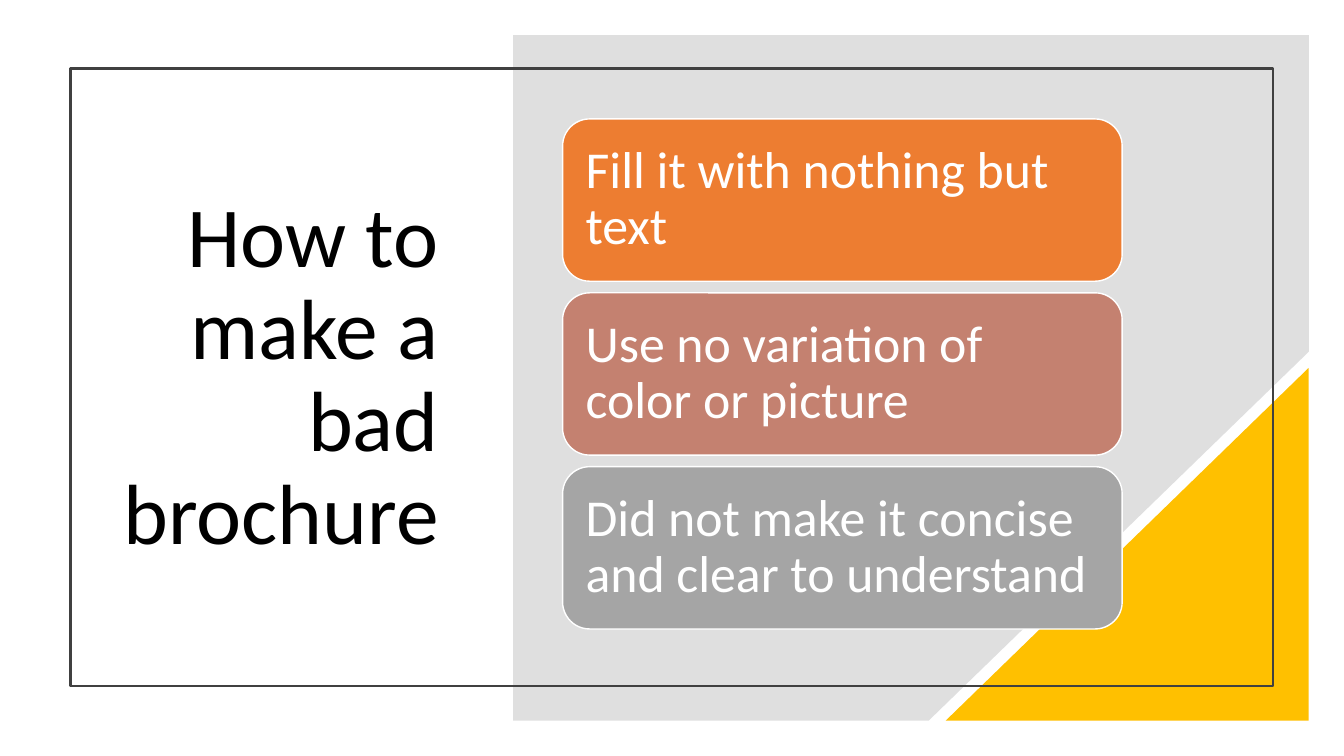
from lxml import etree
from pptx import Presentation
from pptx.dml.color import RGBColor
from pptx.enum.shapes import MSO_SHAPE
from pptx.enum.text import MSO_ANCHOR, MSO_AUTO_SIZE, PP_ALIGN
from pptx.oxml.ns import qn
from pptx.util import Pt

PX = 9144  # EMU per px, 100 px to the inch
FONT = "Calibri"

RECTANGLE = MSO_SHAPE.RECTANGLE
ROUNDED = MSO_SHAPE.ROUNDED_RECTANGLE
RIGHT_TRIANGLE = MSO_SHAPE.RIGHT_TRIANGLE
MIDDLE = MSO_ANCHOR.MIDDLE
LEFT, RIGHT = PP_ALIGN.LEFT, PP_ALIGN.RIGHT
NO_AUTOFIT = MSO_AUTO_SIZE.NONE

BLACK = RGBColor(0x00, 0x00, 0x00)
WHITE = RGBColor(0xFF, 0xFF, 0xFF)
GRAY = RGBColor(0x80, 0x80, 0x80)
CHARCOAL = RGBColor(0x40, 0x40, 0x40)
GOLD = RGBColor(0xFF, 0xC0, 0x00)
ORANGE = RGBColor(0xED, 0x7D, 0x31)
ROSE = RGBColor(0xC4, 0x81, 0x70)
SILVER = RGBColor(0xA5, 0xA5, 0xA5)

TITLE = "How to make a bad brochure"
CARDS = [
    ("Fill it with nothing but text", ORANGE),
    ("Use no variation of color or picture", ROSE),
    ("Did not make it concise and clear to understand", SILVER),
]


def to_emu(*lengths):
    return [round(length * PX) for length in lengths]


def style_shape(shape, fill=None, line=None, width=1):
    shape.shadow.inherit = False
    if fill is None:
        shape.fill.background()
    else:
        shape.fill.solid()
        shape.fill.fore_color.rgb = fill
    if line is None:
        shape.line.fill.background()
    else:
        shape.line.color.rgb = line
        shape.line.width = Pt(width)


def write_text(shape, text, size, color, alignment, side_margins, end_margin):
    frame = shape.text_frame
    frame.word_wrap = True
    frame.auto_size = NO_AUTOFIT
    frame.vertical_anchor = MIDDLE
    frame.margin_left, frame.margin_right = to_emu(*side_margins)
    frame.margin_top = frame.margin_bottom = end_margin * PX
    paragraph = frame.paragraphs[0]
    paragraph.alignment = alignment
    paragraph.line_spacing = 0.9
    run = paragraph.add_run()
    run.text = text
    run.font.name = FONT
    run.font.size = Pt(size)
    run.font.color.rgb = color


def place_title(slide, left, top, width, height):
    title = slide.shapes.title
    title.left, title.top, title.width, title.height = to_emu(left, top, width, height)
    write_text(title, TITLE, 61, BLACK, RIGHT, (5, 10), 5)


def draw_backdrop(slide, left, top, width, height):
    right, bottom = left + width, top + height

    # Translucent panel with its lower right corner cut off
    builder = slide.shapes.build_freeform(left, top, scale=PX)
    builder.add_line_segments([
        (right, top), (right, bottom - 366), (right - 377, bottom), (left, bottom),
    ])
    panel = builder.convert_to_shape()
    style_shape(panel, GRAY)
    color = panel.element.spPr.find(qn("a:solidFill"))[0]
    etree.SubElement(color, qn("a:alpha")).set("val", "25000")

    # Gold corner
    corner = slide.shapes.add_shape(
        RIGHT_TRIANGLE, *to_emu(right - 360, bottom - 350, 360, 350))
    corner.element.spPr.get_or_add_xfrm().set("flipH", "1")
    style_shape(corner, GOLD)


def draw_frame(slide, left, top, width, height):
    frame = slide.shapes.add_shape(RECTANGLE, *to_emu(left, top, width, height))
    style_shape(frame, line=CHARCOAL, width=1.5)


def draw_cards(slide, left, top, width, height):
    card_height = 161
    pitch = (height - card_height) / (len(CARDS) - 1)
    for index, (text, fill) in enumerate(CARDS):
        card = slide.shapes.add_shape(
            ROUNDED, *to_emu(left, top + index * pitch, width, card_height))
        style_shape(card, fill, WHITE)
        # The rounded corners inset the text by a further 8 px
        write_text(card, text, 37, WHITE, LEFT, (15, 15), 15)


def build_slide(presentation):
    slide = presentation.slides.add_slide(presentation.slide_layouts.get_by_name("Title Only"))
    place_title(slide, 110, 130, 335, 490)
    draw_backdrop(slide, 509, 35, 789, 680)
    draw_frame(slide, 70, 68, 1193, 613)
    draw_cards(slide, 558, 118, 555, 506)


def main():
    presentation = Presentation()
    presentation.slide_width, presentation.slide_height = to_emu(1333, 750)
    build_slide(presentation)
    presentation.save("out.pptx")


if __name__ == "__main__":
    main()
